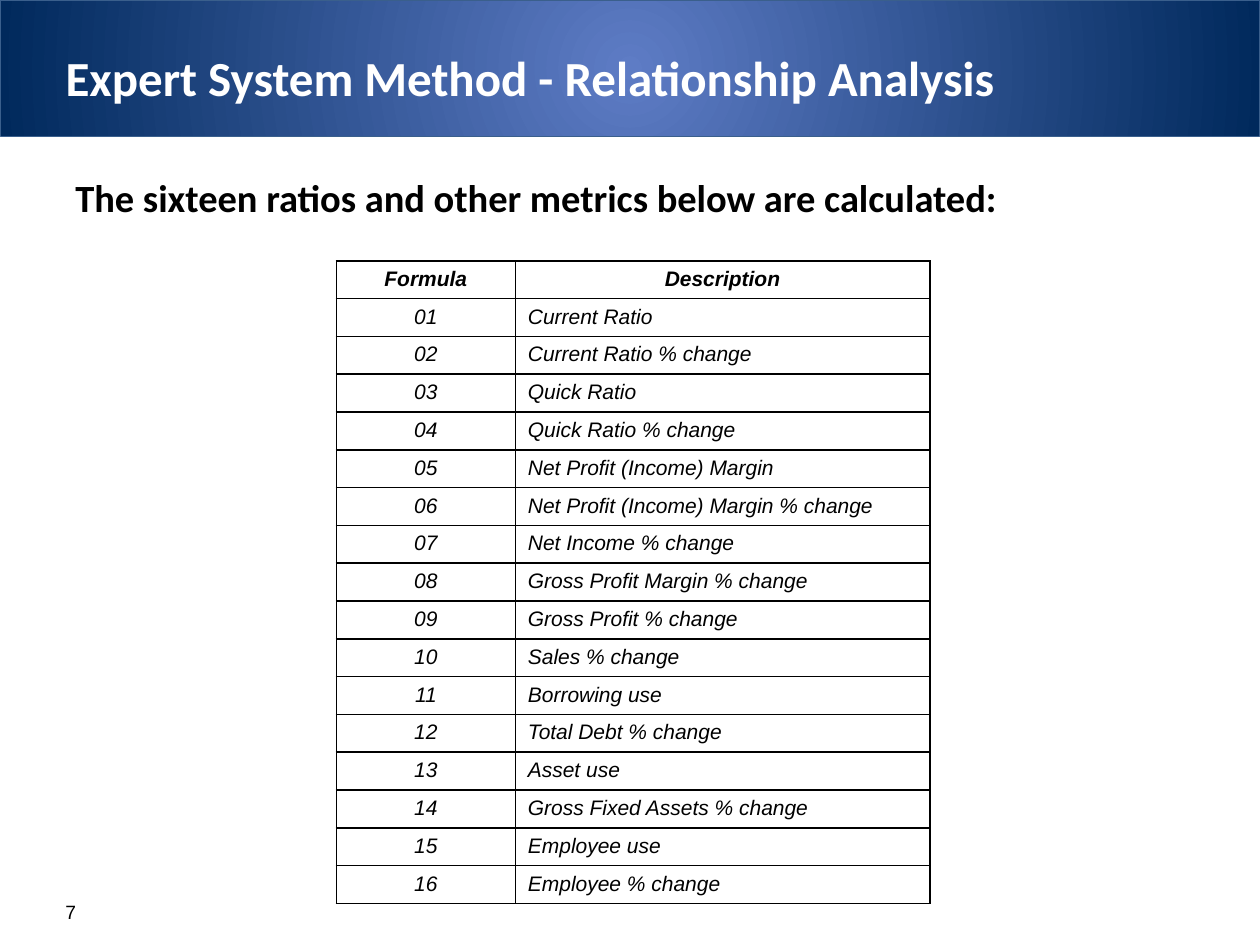
from dataclasses import dataclass

from lxml.etree import SubElement
from pptx import Presentation
from pptx.dml.color import RGBColor
from pptx.enum.shapes import MSO_SHAPE
from pptx.enum.text import MSO_ANCHOR, MSO_AUTO_SIZE, PP_ALIGN
from pptx.oxml import parse_xml
from pptx.oxml.ns import nsdecls, qn
from pptx.util import Inches, Pt


@dataclass(frozen=True)
class Theme:
    heading_font: str = "Calibri"
    body_font: str = "Arial"
    title_size: int = 28
    lead_size: int = 22
    table_size: int = 12
    number_size: int = 11
    black: str = "000000"
    white: str = "FFFFFF"
    band_centre: str = "5E7CC5"
    band_edge: str = "00295C"
    band_line: str = "3A5F8C"


THEME = Theme()
MARGIN = 0.42
ROW_HEIGHT = 0.3
COLUMN_WIDTHS = (1.42, 3.29)
METRICS = (
    "Current Ratio",
    "Current Ratio % change",
    "Quick Ratio",
    "Quick Ratio % change",
    "Net Profit (Income) Margin",
    "Net Profit (Income) Margin % change",
    "Net Income % change",
    "Gross Profit Margin % change",
    "Gross Profit % change",
    "Sales % change",
    "Borrowing use",
    "Total Debt % change",
    "Asset use",
    "Gross Fixed Assets % change",
    "Employee use",
    "Employee % change",
)


def write(frame, text, font, size, color=THEME.black, bold=False, italic=False,
          align=PP_ALIGN.LEFT):
    frame.text = text
    para = frame.paragraphs[0]
    para.alignment = align
    for span in para.runs:
        span.font.name = font
        span.font.size = Pt(size)
        span.font.bold = bold
        span.font.italic = italic
        span.font.color.rgb = RGBColor.from_string(color)


def add_band(page, width, height):
    """Add the header band behind everything else, with a radial gradient."""
    band = page.shapes.add_shape(MSO_SHAPE.RECTANGLE, 0, 0, width, height)
    band.shadow.inherit = False
    band.line.color.rgb = RGBColor.from_string(THEME.band_line)
    band.line.width = Pt(0.5)
    gradient = parse_xml(
        f'<a:gradFill {nsdecls("a")} rotWithShape="1"><a:gsLst>'
        f'<a:gs pos="0"><a:srgbClr val="{THEME.band_centre}"/></a:gs>'
        f'<a:gs pos="100000"><a:srgbClr val="{THEME.band_edge}"/></a:gs></a:gsLst>'
        '<a:path path="circle"><a:fillToRect l="50000" t="50000" r="50000" b="50000"/>'
        '</a:path></a:gradFill>')
    band.element.spPr.find(qn("a:prstGeom")).addnext(gradient)
    page.shapes.element.insert(2, band.element)


def set_title(page, text):
    title = page.shapes.title
    title.left, title.top = Inches(MARGIN), Inches(0.33)
    title.width, title.height = Inches(10 - 2 * MARGIN), Inches(0.57)
    frame = title.text_frame
    frame.auto_size = MSO_AUTO_SIZE.NONE
    frame.vertical_anchor = MSO_ANCHOR.TOP
    write(frame, text, THEME.heading_font, THEME.title_size, THEME.white, bold=True)


def add_text(page, left, top, width, height, text, font, size, bold=False,
             anchor=MSO_ANCHOR.TOP):
    box = page.shapes.add_textbox(*map(Inches, (left, top, width, height)))
    box.text_frame.word_wrap = True
    box.text_frame.vertical_anchor = anchor
    write(box.text_frame, text, font, size, bold=bold)


def draw_borders(cell):
    properties = cell._tc.get_or_add_tcPr()
    for side in ("lnL", "lnR", "lnT", "lnB"):
        line = SubElement(properties, qn(f"a:{side}"), w=str(Pt(1)))
        fill = SubElement(line, qn("a:solidFill"))
        SubElement(fill, qn("a:srgbClr"), val=THEME.black)


def add_metric_table(page, left, top):
    rows = [("Formula", "Description")]
    rows += [(f"{number:02d}", name) for number, name in enumerate(METRICS, 1)]
    table = page.shapes.add_table(
        len(rows), len(COLUMN_WIDTHS), Inches(left), Inches(top),
        Inches(sum(COLUMN_WIDTHS)), Inches(ROW_HEIGHT * len(rows))).table
    table.horz_banding = False
    for column, width in zip(table.columns, COLUMN_WIDTHS):
        column.width = Inches(width)
    for row_index, values in enumerate(rows):
        table.rows[row_index].height = Inches(ROW_HEIGHT)
        is_header = row_index == 0
        for column_index, value in enumerate(values):
            cell = table.cell(row_index, column_index)
            centred = is_header or column_index == 0
            draw_borders(cell)
            cell.fill.background()
            write(cell.text_frame, value, THEME.body_font, THEME.table_size,
                  bold=is_header, italic=True,
                  align=PP_ALIGN.CENTER if centred else PP_ALIGN.LEFT)


def main():
    deck = Presentation()
    deck.slide_width, deck.slide_height = Inches(10), Inches(7.5)
    page = deck.slides.add_slide(deck.slide_layouts.get_by_name("Title Only"))
    add_band(page, deck.slide_width, Inches(1.08))
    set_title(page, "Expert System Method - Relationship Analysis")
    add_metric_table(page, 2.67, 2.07)
    add_text(page, MARGIN, 7.08, 2.33, 0.32, "7", THEME.body_font,
             THEME.number_size, anchor=MSO_ANCHOR.MIDDLE)
    add_text(page, 0.5, 1.33, 9, 0.84,
             "The sixteen ratios and other metrics below are calculated:",
             THEME.heading_font, THEME.lead_size, bold=True)
    deck.save("out.pptx")


if __name__ == "__main__":
    main()
